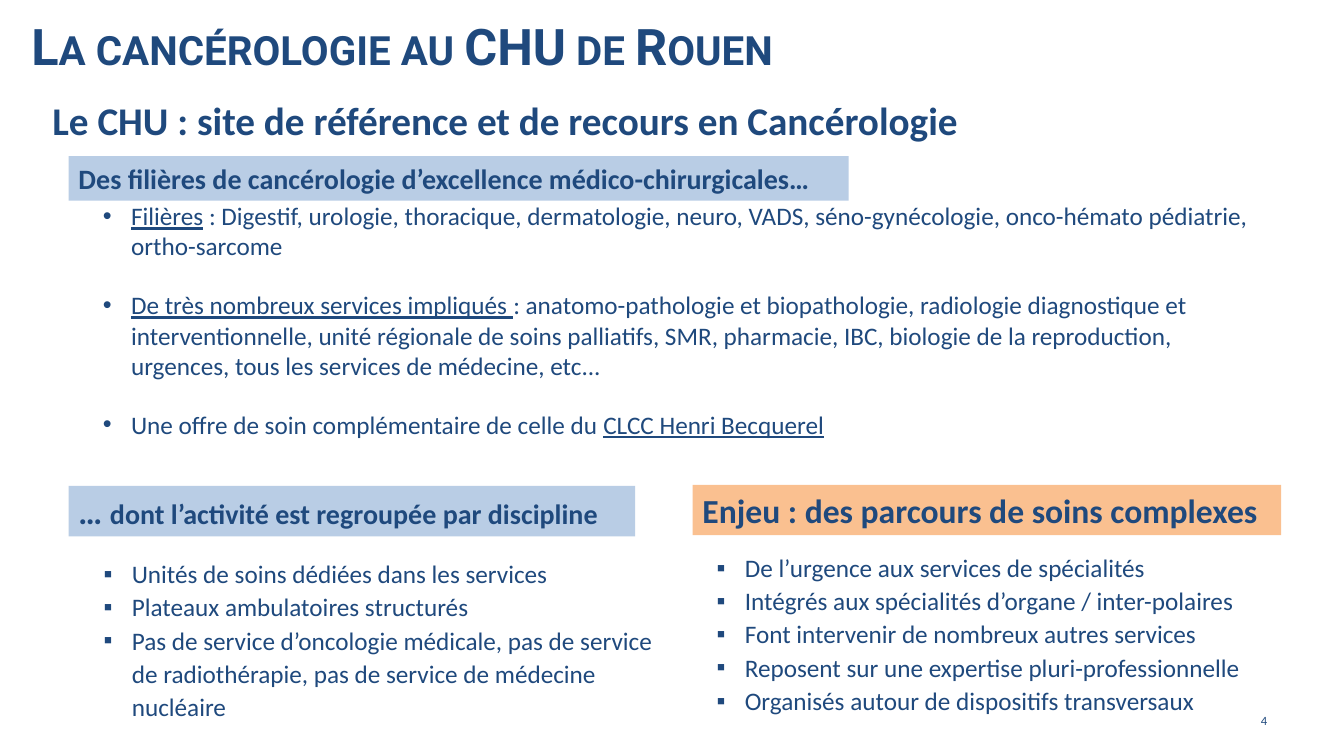
from lxml import etree
from pptx import Presentation
from pptx import util as u
from pptx.dml.color import RGBColor
from pptx.enum import shapes, text
from pptx.oxml import ns

SLIDE_WIDTH, SLIDE_HEIGHT = u.Inches(13.33), u.Inches(7.5)
COLORS = {"navy": "1F497D", "blue": "B9CDE5", "orange": "FAC090"}
HANGING = 0.28

SECTORS = [
    (40.5, [("Filières", True),
            (" : Digestif, urologie, thoracique, dermatologie, neuro, VADS, "
             "séno-gynécologie, onco-hémato pédiatrie, ortho-sarcome", False)]),
    (20.5, [("De très nombreux services impliqués ", True),
            (": anatomo-pathologie et biopathologie, radiologie diagnostique et "
             "interventionnelle, unité régionale de soins palliatifs, SMR, pharmacie, "
             "IBC, biologie de la reproduction, urgences, tous les services de "
             "médecine, etc...", False)]),
    (20.5, [("Une offre de soin complémentaire de celle du ", False),
            ("CLCC Henri Becquerel", True)]),
]
UNITS = [
    "Unités de soins dédiées dans les services",
    "Plateaux ambulatoires structurés",
    "Pas de service d’oncologie médicale, pas de service de radiothérapie, "
    "pas de service de médecine nucléaire",
]
PATHWAYS = [
    "De l’urgence aux services de spécialités",
    "Intégrés aux spécialités d’organe / inter-polaires",
    "Font intervenir de nombreux autres services",
    "Reposent sur une expertise pluri-professionnelle",
    "Organisés autour de dispositifs transversaux",
]


def area(left, top, width, height):
    """Turn percentages of the slide into left, top, width and height."""
    return (int(SLIDE_WIDTH * left / 100), int(SLIDE_HEIGHT * top / 100),
            int(SLIDE_WIDTH * width / 100), int(SLIDE_HEIGHT * height / 100))


def move(shape, place):
    shape.left, shape.top, shape.width, shape.height = place


def prepare_frame(shape, anchor=text.MSO_ANCHOR.TOP):
    frame = shape.text_frame
    frame.word_wrap = True
    frame.auto_size = text.MSO_AUTO_SIZE.NONE
    frame.vertical_anchor = anchor
    return frame


def add_run(paragraph, words, size, bold=False, underline=False, font="Calibri"):
    run = paragraph.add_run()
    run.text = words
    run.font.name = font
    run.font.size = u.Pt(size)
    run.font.bold = bold
    run.font.underline = underline
    run.font.color.rgb = RGBColor.from_string(COLORS["navy"])
    return run


def set_bullet(paragraph, margin, symbol=None):
    """Hang the symbol left of the margin; without a symbol, clear the bullet."""
    properties = paragraph._p.get_or_add_pPr()
    properties.set("marL", str(u.Inches(margin)))
    properties.set("indent", str(u.Inches(-HANGING if symbol else 0)))
    if symbol:
        etree.SubElement(properties, ns.qn("a:buFont"), typeface="Arial")
        etree.SubElement(properties, ns.qn("a:buChar"), char=symbol)
    else:
        etree.SubElement(properties, ns.qn("a:buNone"))


def fill_title(slide):
    title = slide.shapes.title
    move(title, area(1.58, 1.73, 63.67, 8.53))
    paragraph = prepare_frame(title, text.MSO_ANCHOR.MIDDLE).paragraphs[0]
    paragraph.alignment = text.PP_ALIGN.LEFT
    run = add_run(paragraph, "La cancérologie au CHU de Rouen", 36, True, font="Roboto")
    run._r.get_or_add_rPr().set("cap", "small")


def fill_body(slide):
    body = slide.placeholders[1]
    move(body, area(3.15, 12.13, 92.1, 52.53))
    frame = prepare_frame(body)
    heading = frame.paragraphs[0]
    set_bullet(heading, 0)
    heading.space_before = u.Pt(0)
    add_run(heading, "Le CHU : site de référence et de recours en Cancérologie", 28, True)
    for space, runs in SECTORS:
        paragraph = frame.add_paragraph()
        paragraph.level = 1
        set_bullet(paragraph, 0.78, "•")
        paragraph.space_before = u.Pt(space)
        for words, underline in runs:
            add_run(paragraph, words, 18, underline=underline)


def add_banner(slide, place, color, runs):
    banner = slide.shapes.add_shape(shapes.MSO_SHAPE.RECTANGLE, *place)
    banner.shadow.inherit = False
    banner.fill.solid()
    banner.fill.fore_color.rgb = RGBColor.from_string(COLORS[color])
    banner.line.fill.background()
    paragraph = prepare_frame(banner).paragraphs[0]
    paragraph.alignment = text.PP_ALIGN.LEFT
    for words, size in runs:
        add_run(paragraph, words, size, True)


def add_list(slide, place, margin, items):
    frame = prepare_frame(slide.shapes.add_textbox(*place))
    for index, item in enumerate(items):
        paragraph = frame.add_paragraph() if index else frame.paragraphs[0]
        set_bullet(paragraph, margin, "▪")
        paragraph.line_spacing = 1.1
        add_run(paragraph, item, 18)


def add_page_number(slide, number):
    box = slide.shapes.add_textbox(*area(71.7, 92.67, 23.33, 5.33))
    paragraph = prepare_frame(box, text.MSO_ANCHOR.MIDDLE).paragraphs[0]
    paragraph.alignment = text.PP_ALIGN.RIGHT
    add_run(paragraph, number, 9)


def main():
    presentation = Presentation()
    presentation.slide_width, presentation.slide_height = SLIDE_WIDTH, SLIDE_HEIGHT
    slide = presentation.slides.add_slide(presentation.slide_layouts[1])
    fill_title(slide)
    fill_body(slide)
    add_page_number(slide, "4")
    add_list(slide, area(52.58, 72, 46.5, 23.6), HANGING, PATHWAYS)
    add_list(slide, area(3.22, 72.8, 46.1, 23.33), 0.78, UNITS)
    add_banner(slide, area(5.1, 64.27, 42.15, 6.67), "blue",
               [("… ", 24), ("dont l’activité est regroupée par discipline", 20)])
    add_banner(slide, area(5.1, 20.67, 58.05, 5.87), "blue",
               [("Des filières de cancérologie d’excellence médico-chirurgicales…", 20)])
    add_banner(slide, area(51.53, 64.13, 43.8, 6.67), "orange",
               [("Enjeu : des parcours de soins complexes", 24)])
    presentation.save("out.pptx")


if __name__ == "__main__":
    main()
